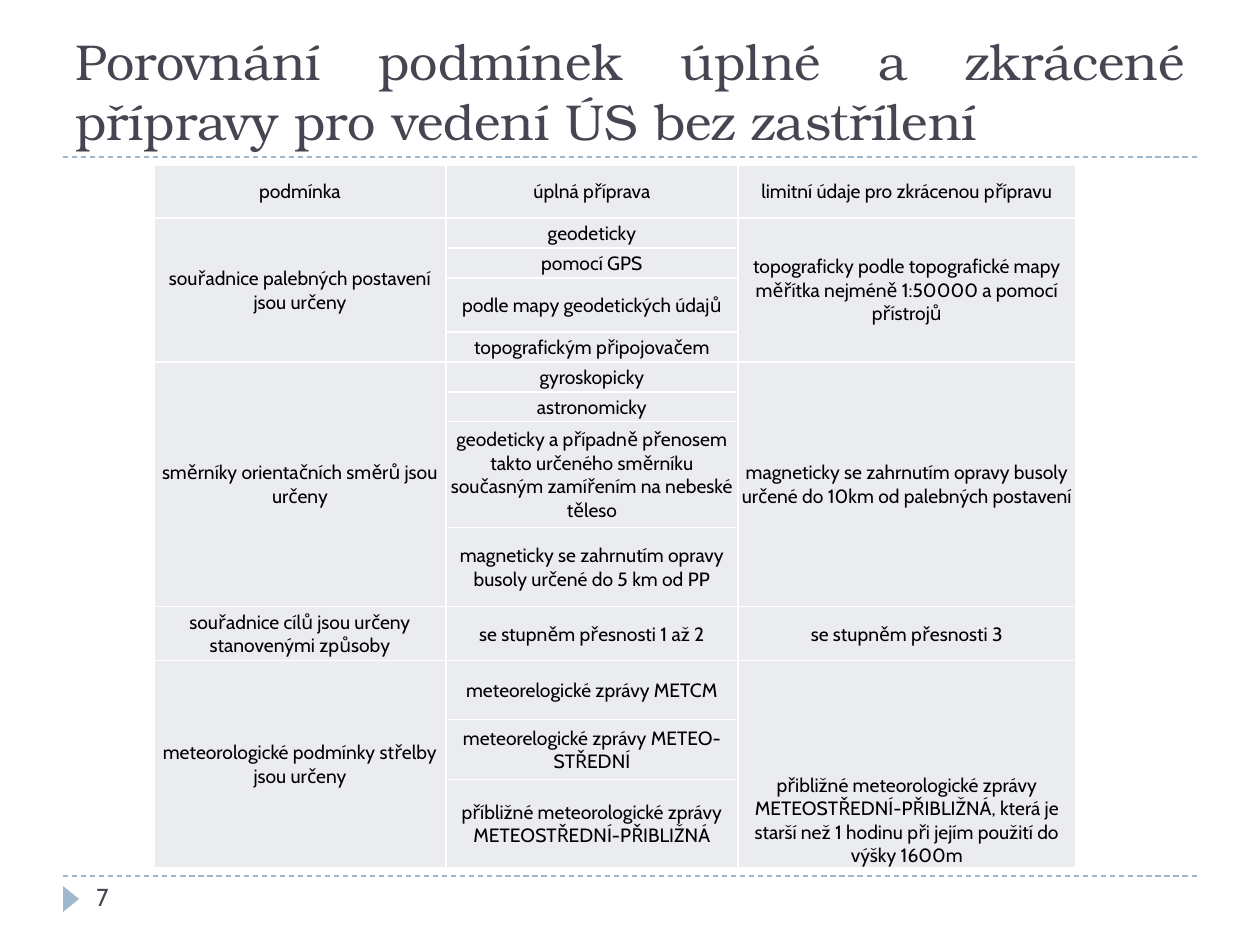
from lxml.etree import SubElement
from pptx import Presentation
from pptx.dml.color import RGBColor
from pptx.enum.dml import MSO_LINE
from pptx.enum.shapes import MSO_CONNECTOR, MSO_SHAPE
from pptx.enum.text import MSO_ANCHOR, PP_ALIGN
from pptx.oxml.ns import qn
from pptx.util import Emu, Inches, Pt

PX_PER_INCH = 126
WHITE = RGBColor(0xFF, 0xFF, 0xFF)
BLACK = RGBColor(0, 0, 0)
SLATE = RGBColor(0x46, 0x46, 0x53)
BLUE = RGBColor(0x9F, 0xB8, 0xCD)
CELL_GREY = RGBColor(0xEB, 0xEC, 0xF0)
BODY_FONT = "Cabin"
TITLE_FONT = "TeX Gyre Bonum"

COLUMN_WIDTHS = [292, 292, 338]
HEADER = ("podmínka", "úplná příprava", "limitní údaje pro zkrácenou přípravu")
HEADER_HEIGHT = 53
# Each group: condition, [(full preparation, row height)], limit, anchor of the limit
GROUPS = [
    ("souřadnice palebných postavení jsou určeny",
     [("geodeticky", 30), ("pomocí GPS", 30),
      ("podle mapy geodetických údajů", 54), ("topografickým připojovačem", 30)],
     "topograficky podle topografické mapy měřítka nejméně 1:50000 a pomocí přístrojů",
     MSO_ANCHOR.MIDDLE),
    ("směrníky orientačních směrů jsou určeny",
     [("gyroskopicky", 30), ("astronomicky", 30),
      ("geodeticky a případně přenosem takto určeného směrníku současným "
       "zamířením na nebeské těleso", 106),
      ("magneticky se zahrnutím opravy busoly určené do 5 km od PP", 79)],
     "magneticky se zahrnutím opravy busoly určené do 10km od palebných postavení",
     MSO_ANCHOR.MIDDLE),
    ("souřadnice cílů jsou určeny stanovenými způsoby",
     [("se stupněm přesnosti 1 až 2", 54)],
     "se stupněm přesnosti 3",
     MSO_ANCHOR.MIDDLE),
    ("meteorologické podmínky střelby jsou určeny",
     [("meteorelogické zprávy METCM", 59),
      ("meteorelogické zprávy METEO-STŘEDNÍ", 60),
      ("příbližné meteorologické zprávy METEOSTŘEDNÍ-PŘIBLIŽNÁ", 88)],
     "přibližné meteorologické zprávy METEOSTŘEDNÍ-PŘIBLIŽNÁ, která je starší než "
     "1 hodinu při jejím použití do výšky 1600m",
     MSO_ANCHOR.BOTTOM),
]


def px(length):
    return Emu(round(length * Inches(1) / PX_PER_INCH))


def write_text(frame, text, *, font=BODY_FONT, size=11, color=BLACK,
               align=PP_ALIGN.LEFT):
    frame.word_wrap = True
    paragraph = frame.paragraphs[0]
    paragraph.alignment = align
    run = paragraph.add_run()
    run.text = text
    run.font.name = font
    run.font.size = Pt(size)
    run.font.color.rgb = color


def add_rule(slide, left, top, width):
    line = slide.shapes.add_connector(
        MSO_CONNECTOR.STRAIGHT, px(left), px(top), px(left + width), px(top))
    line.line.color.rgb = BLUE
    line.line.width = Pt(0.75)
    line.line.dash_style = MSO_LINE.DASH
    SubElement(line._element.spPr, qn("a:effectLst"))


def add_title(slide, left, top, width, height):
    add_rule(slide, left, top + height, width)
    box = slide.shapes.add_textbox(px(left), px(top), px(width), px(height))
    box.text_frame.vertical_anchor = MSO_ANCHOR.BOTTOM
    write_text(box.text_frame,
               "Porovnání podmínek úplné a zkrácené přípravy pro vedení ÚS bez zastřílení",
               font=TITLE_FONT, size=28.8, color=SLATE, align=PP_ALIGN.JUSTIFY)


def add_footer(slide, left, top, width):
    add_rule(slide, left, top, width)
    marker = slide.shapes.add_shape(
        MSO_SHAPE.ISOSCELES_TRIANGLE, px(left - 5), px(top + 15), px(26), px(16))
    marker.rotation = 90
    marker.shadow.inherit = False
    marker.fill.solid()
    marker.fill.fore_color.rgb = BLUE
    marker.line.fill.background()
    number = slide.shapes.add_textbox(px(left + 21), px(top), px(273), px(50))
    write_text(number.text_frame, "7", size=14, color=SLATE)


def add_borders(cell):
    properties = cell._tc.get_or_add_tcPr()
    for index, side in enumerate(("lnL", "lnR", "lnT", "lnB")):
        border = properties.makeelement(qn(f"a:{side}"), {"w": str(Pt(1))})
        fill = SubElement(border, qn("a:solidFill"))
        SubElement(fill, qn("a:srgbClr"), val=str(WHITE))
        properties.insert(index, border)


def fill_cell(cell, text, anchor=MSO_ANCHOR.MIDDLE):
    cell.margin_left = cell.margin_right = cell.margin_top = px(1)
    cell.margin_bottom = 0
    cell.vertical_anchor = anchor
    write_text(cell.text_frame, text, align=PP_ALIGN.CENTER)


def add_conditions_table(slide, left, top):
    heights = [HEADER_HEIGHT] + [
        height for _, methods, _, _ in GROUPS for _, height in methods]
    table = slide.shapes.add_table(
        len(heights), len(COLUMN_WIDTHS), px(left), px(top),
        px(sum(COLUMN_WIDTHS)), px(sum(heights))).table
    table.first_row = table.horz_banding = False
    for column, width in zip(table.columns, COLUMN_WIDTHS):
        column.width = px(width)
    for row, height in zip(table.rows, heights):
        row.height = px(height)
    for cell in table.iter_cells():
        cell.fill.solid()
        cell.fill.fore_color.rgb = CELL_GREY
        add_borders(cell)
        # Keeps empty merged cells from stretching short rows
        cell.text_frame.paragraphs[0].font.size = Pt(11)
        cell.margin_top = cell.margin_bottom = 0

    for column, text in enumerate(HEADER):
        fill_cell(table.cell(0, column), text)
    first = 1
    for condition, methods, limit, limit_anchor in GROUPS:
        last = first + len(methods) - 1
        if last > first:
            for column in (0, 2):
                table.cell(first, column).merge(table.cell(last, column))
        fill_cell(table.cell(first, 0), condition)
        for row, (method, _) in enumerate(methods, first):
            fill_cell(table.cell(row, 1), method)
        fill_cell(table.cell(first, 2), limit, limit_anchor)
        first = last + 1


def main():
    presentation = Presentation()
    presentation.slide_width = px(1260)
    presentation.slide_height = px(945)
    slide = presentation.slides.add_slide(presentation.slide_layouts[6])
    add_title(slide, 63, 21, 1134, 136)
    add_footer(slide, 63, 876, 1134)
    add_conditions_table(slide, 154, 165)
    presentation.save("out.pptx")


if __name__ == "__main__":
    main()
